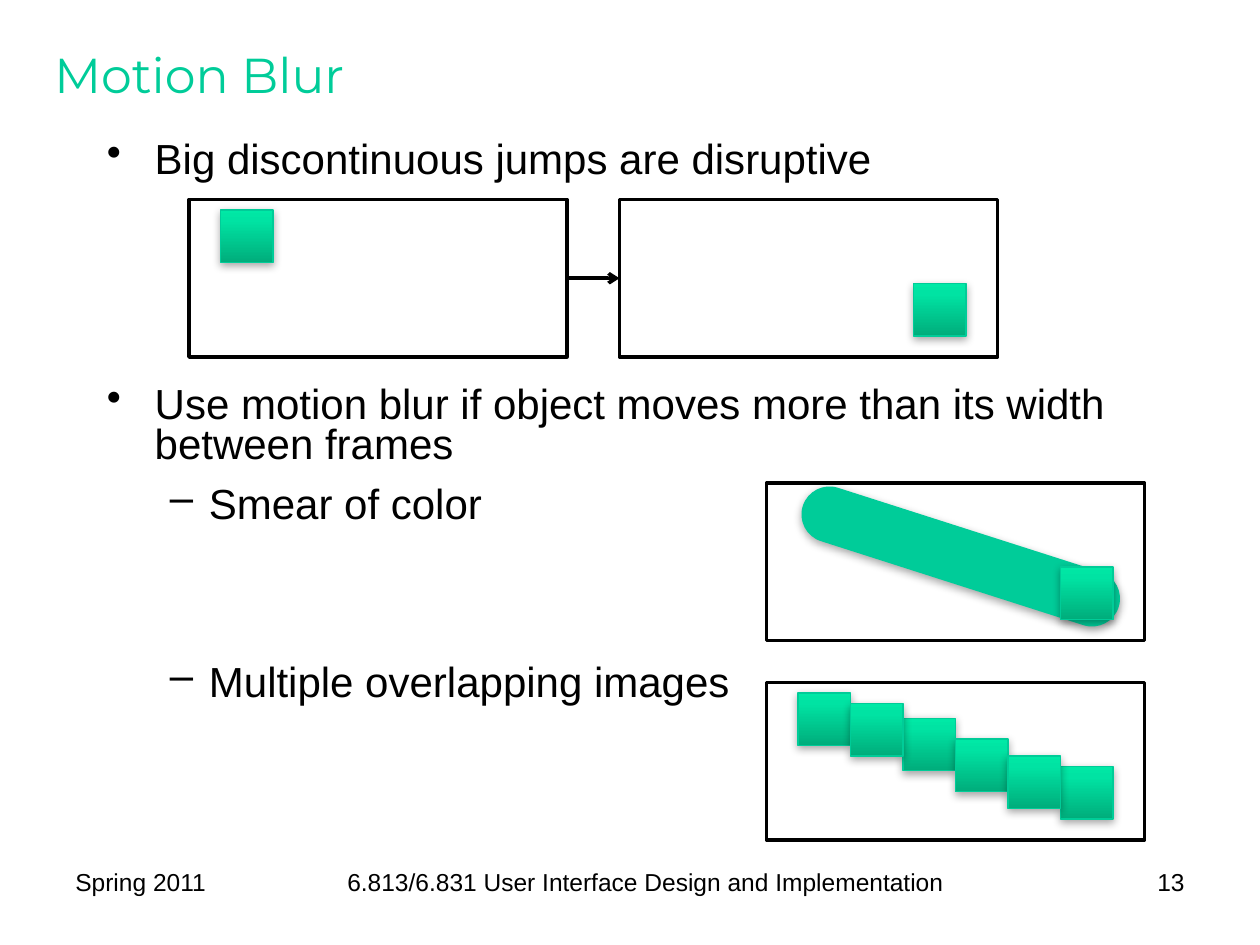
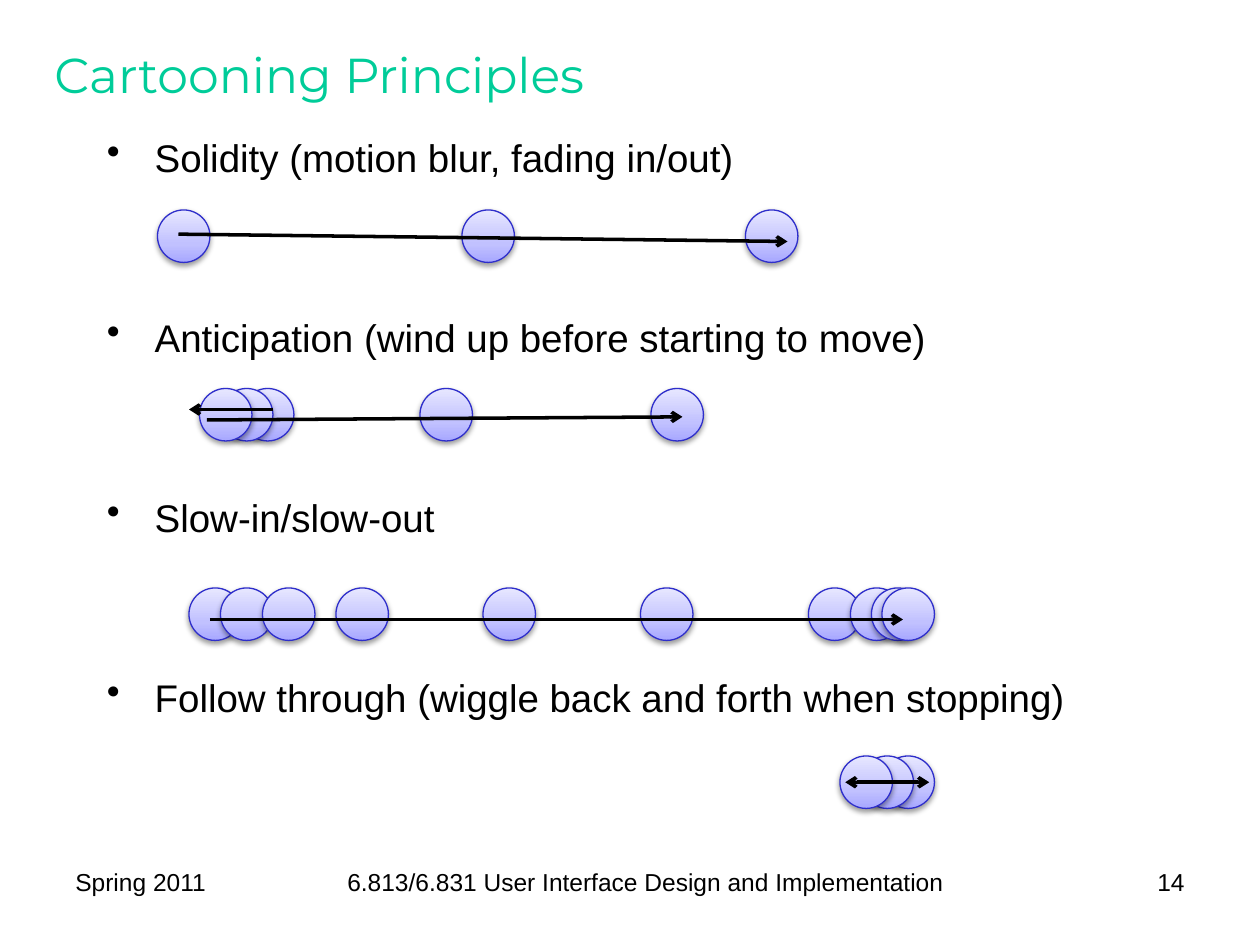
import lxml.etree
import pptx
import pptx.dml.color
import pptx.enum.shapes
import pptx.enum.text
import pptx.oxml.ns
import pptx.util

WIDE, HIGH = 10, 7.5
COLS, ROWS = 120, 90
SIDE = 5
FRAME = (36, 15)
BLACK, WHITE, GREEN = "000000", "FFFFFF", "00CC99"
BLUR = (35, 5, 1.8)
SHAPE = pptx.enum.shapes.MSO_SHAPE
ALIGN = pptx.enum.text.PP_ALIGN
SQUARE = dict(kind=SHAPE.RECTANGLE, edge="00CC98", shade=BLUR,
              stops=[(0, "00AD7B"), (80, "00E3A3"), (100, "00E9A6")])
BALL = dict(kind=SHAPE.OVAL, edge="2E2ECB", shade=(38, 3.1, 1.6),
            stops=[(0, "A7A7FF"), (35, "C1C1FF"), (100, "E7E7FF")])
LEVELS = [("•", 0.38, 0.38, 0.8), ("–", 0.81, 0.31, 1.0)]


def color(code):
    return pptx.dml.color.RGBColor.from_string(code)


def across(cols):
    return pptx.util.Inches(cols * WIDE / COLS)


def down(rows):
    return pptx.util.Inches(rows * HIGH / ROWS)


def node(parent, tag, **attrs):
    child = lxml.etree.SubElement(parent, pptx.oxml.ns.qn("a:" + tag))
    for key, value in attrs.items():
        child.set(key, str(value))
    return child


def shadow(item, shade=None):
    effects = node(item._element.spPr, "effectLst")
    if shade:
        alpha, blur, dist = shade
        outer = node(effects, "outerShdw", blurRad=pptx.util.Pt(blur),
                     dist=pptx.util.Pt(dist), dir=5400000, rotWithShape=0)
        node(node(outer, "srgbClr", val=BLACK), "alpha", val=alpha * 1000)


def stroke(item, code, width):
    item.line.color.rgb = color(code)
    item.line.width = pptx.util.Pt(width)


def textbox(slide, left, top, width, height):
    box = slide.shapes.add_textbox(across(left), down(top), across(width), down(height))
    box.text_frame.word_wrap = True
    return box.text_frame


def write(para, text, size, code=BLACK, face="Arial"):
    para.text = text
    para.font.size = pptx.util.Pt(size)
    para.font.name = face
    para.font.color.rgb = color(code)


def label(slide, text, left, width, align):
    para = textbox(slide, left, 82, width, 6.2).paragraphs[0]
    write(para, text, 14)
    para.alignment = align


def page(deck, title, number):
    slide = deck.slides.add_slide(deck.slide_layouts[6])
    frame = textbox(slide, 4, 2, 111, 10)
    frame.vertical_anchor = pptx.enum.text.MSO_ANCHOR.MIDDLE
    write(frame.paragraphs[0], title, 28, GREEN, "Montserrat")
    label(slide, "Spring 2011", 6, 18, ALIGN.LEFT)
    label(slide, "6.813/6.831 User Interface Design and Implementation", 25, 73, ALIGN.CENTER)
    label(slide, str(number), 99, 15, ALIGN.RIGHT)
    return slide


def bullets(slide, size, items):
    frame = textbox(slide, 9, 13, 102, 67)
    for index, (level, gap, text) in enumerate(items):
        para = frame.add_paragraph() if index else frame.paragraphs[0]
        write(para, text, size)
        mark, left, hang, pitch = LEVELS[level]
        para.level = level
        para.line_spacing = pitch
        para.space_before = pptx.util.Pt(gap)
        props = para._p.get_or_add_pPr()
        props.set("marL", str(pptx.util.Inches(left)))
        props.set("indent", str(pptx.util.Inches(-hang)))
        bullet = node(props, "buChar", char=mark)
        props.find(pptx.oxml.ns.qn("a:defRPr")).addprevious(bullet)


def window(slide, left, top):
    box = slide.shapes.add_shape(SHAPE.RECTANGLE, across(left), down(top),
                                 across(FRAME[0]), down(FRAME[1]))
    box.fill.solid()
    box.fill.fore_color.rgb = color(WHITE)
    stroke(box, BLACK, 2)
    shadow(box)


def token(slide, style, left, top):
    item = slide.shapes.add_shape(style["kind"], across(left), down(top),
                                  across(SIDE), down(SIDE))
    grad = node(item._element.spPr, "gradFill", rotWithShape=1)
    stops = node(grad, "gsLst")
    for place, code in style["stops"]:
        node(node(stops, "gs", pos=place * 1000), "srgbClr", val=code)
    node(grad, "lin", ang=16200000, scaled=0)
    stroke(item, style["edge"], 0.75)
    shadow(item, style["shade"])


def line(slide, start, end, code=BLACK, width=2, shade=None):
    item = slide.shapes.add_connector(
        pptx.enum.shapes.MSO_CONNECTOR.STRAIGHT,
        across(start[0]), down(start[1]), across(end[0]), down(end[1]))
    stroke(item, code, width)
    shadow(item, shade)
    return item.line._get_or_add_ln()


def arrow(slide, start, end, tips=("tailEnd",)):
    edge = line(slide, start, end)
    for tip in tips:
        node(edge, tip, type="arrow")


def smear(slide, start, end):
    line(slide, start, end, GREEN, 32, BLUR).set("cap", "rnd")


def motion(deck):
    slide = page(deck, "Motion Blur", 13)
    bullets(slide, 24, [
        (0, 5.5, "Big discontinuous jumps are disruptive"),
        (0, 116.8, "Use motion blur if object moves more than its width between frames"),
        (1, 5.5, "Smear of color"),
        (1, 73, "Multiple overlapping images"),
    ])
    for left, top in [(18, 19), (59, 19), (73, 46), (73, 65)]:
        window(slide, left, top)
    arrow(slide, (54, 26.5), (59, 26.5))
    smear(slide, (79, 49), (104, 57))
    trail = [(76, 66), (86, 68.4), (101, 73), (91, 70.4), (96, 72), (81, 67)]
    for left, top in [(21, 20), (87, 27), (101, 54)] + trail:
        token(slide, SQUARE, left, top)


def cartoon(deck):
    slide = page(deck, "Cartooning Principles", 14)
    topics = ["Solidity (motion blur, fading in/out)",
              "Anticipation (wind up before starting to move)",
              "Slow-in/slow-out",
              "Follow through (wiggle back and forth when stopping)"]
    bullets(slide, 22, [(0, 81.8 if index else 5.3, text)
                        for index, text in enumerate(topics)])
    tracks = {20: [15, 44, 71],
              37: [23, 21, 19, 40, 62],
              56: [18, 21, 25, 32, 46, 61, 77, 81, 83, 84],
              72: [84, 82, 80]}
    for top, lefts in tracks.items():
        for left in lefts:
            token(slide, BALL, left, top)
    arrow(slide, (17, 22.3), (75, 23))
    arrow(slide, (26, 39), (18, 39))
    arrow(slide, (19.7, 40), (65, 39.7))
    arrow(slide, (20, 59), (86, 59))
    arrow(slide, (88.5, 74.5), (80.5, 74.5), ("headEnd", "tailEnd"))


def main():
    deck = pptx.Presentation()
    deck.slide_width = pptx.util.Inches(WIDE)
    deck.slide_height = pptx.util.Inches(HIGH)
    motion(deck)
    cartoon(deck)
    deck.save("out.pptx")


if __name__ == "__main__":
    main()
